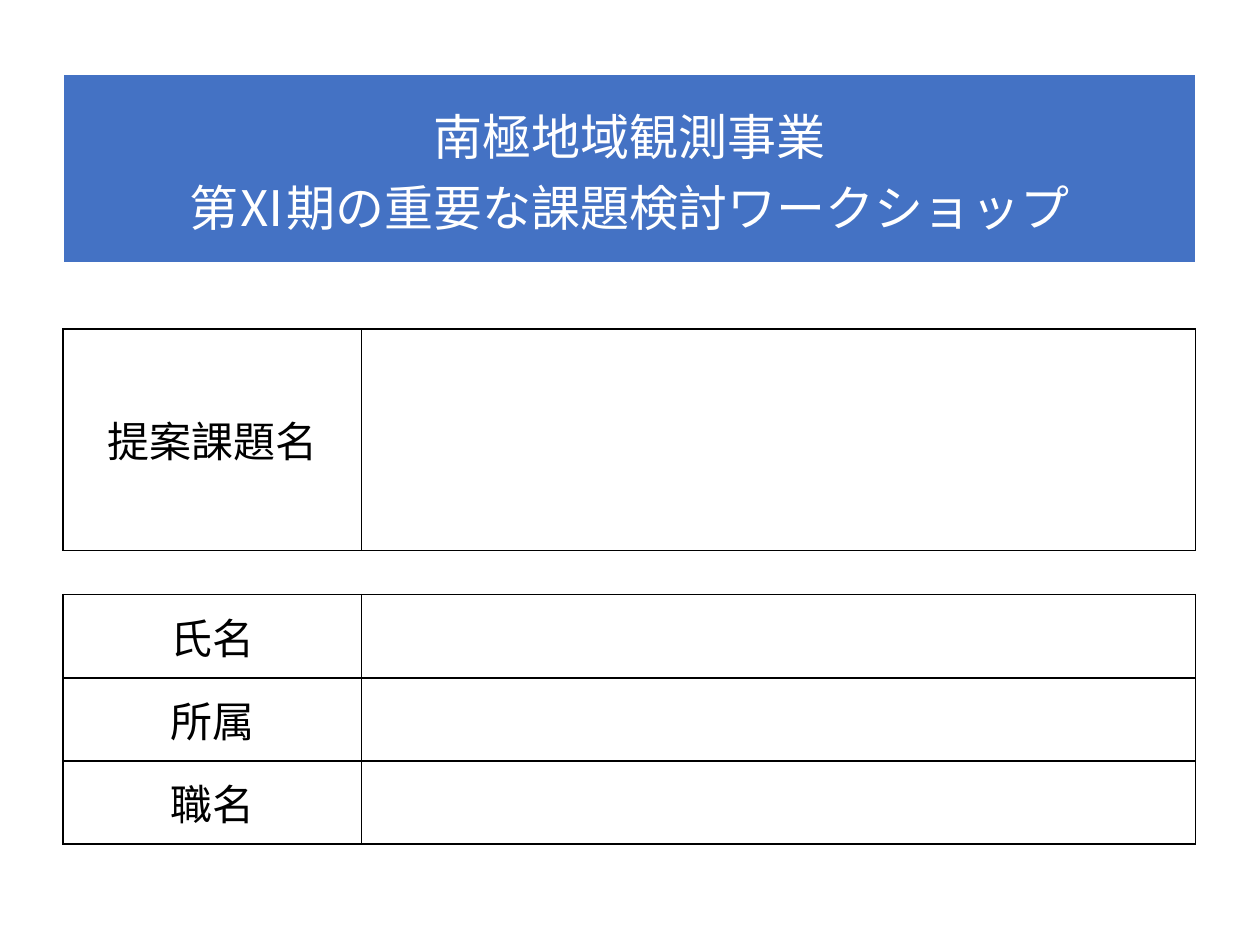
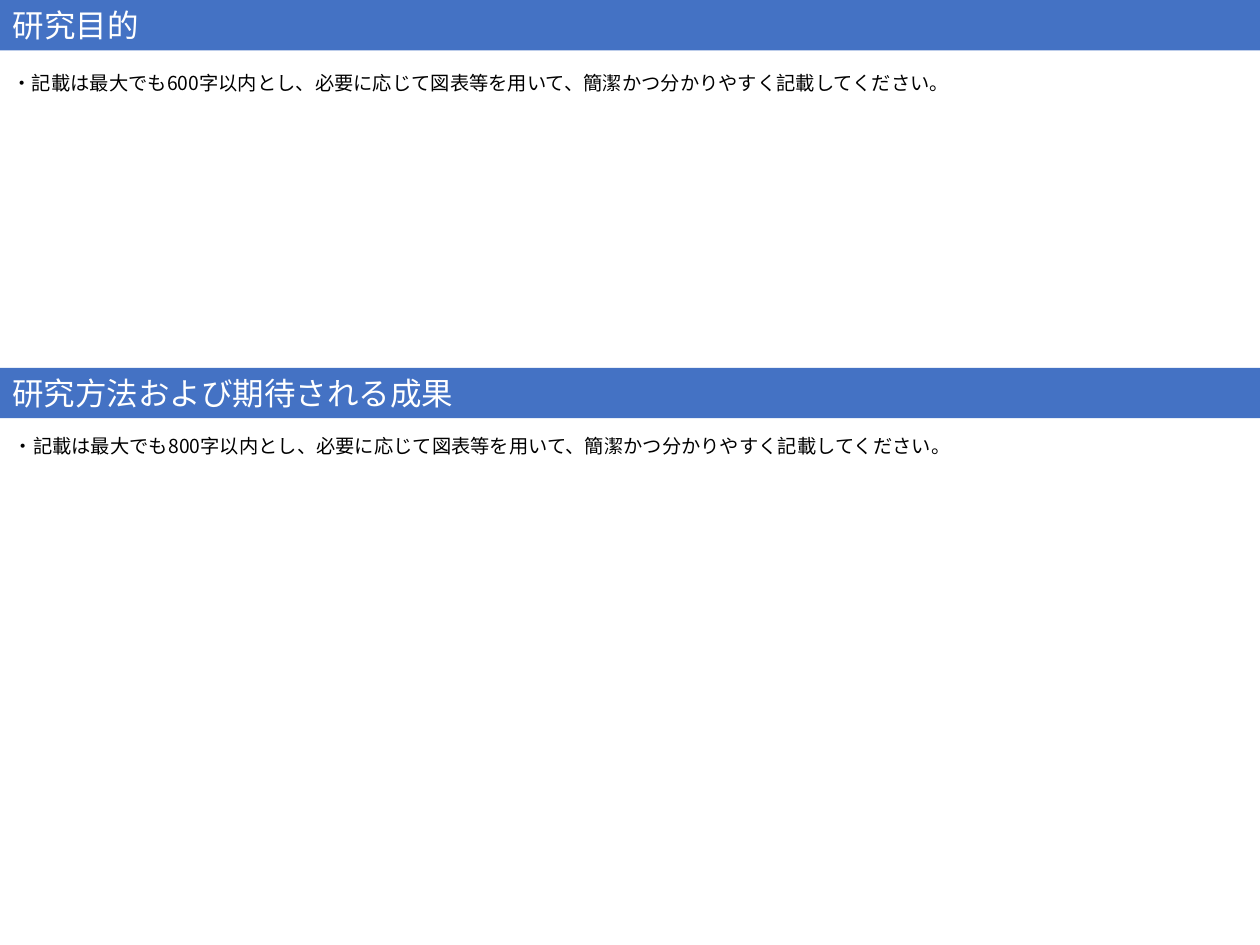
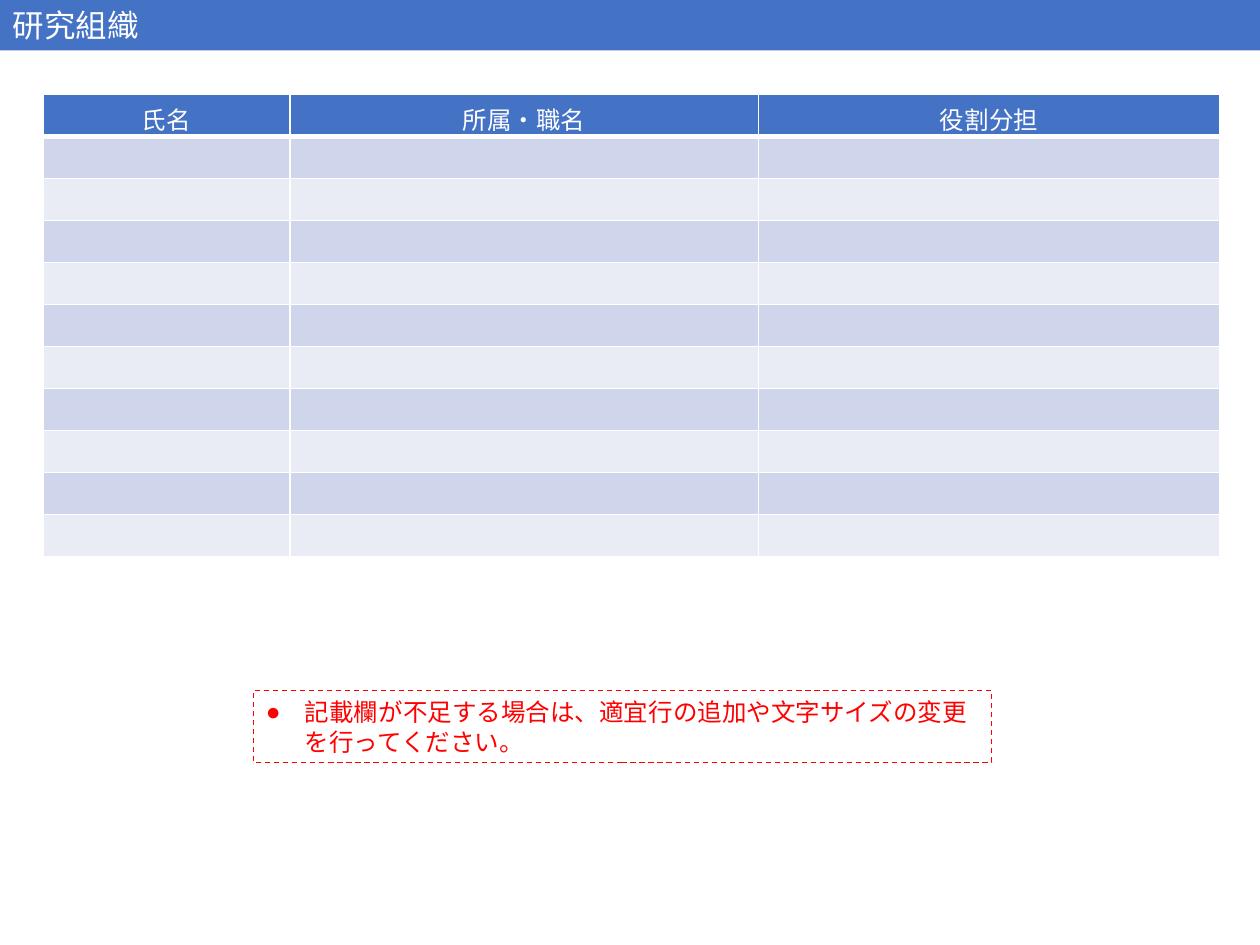
from lxml import etree
from pptx import Presentation
from pptx.dml.color import RGBColor
from pptx.enum.dml import MSO_LINE
from pptx.enum.shapes import MSO_SHAPE
from pptx.enum.text import MSO_ANCHOR, MSO_AUTO_SIZE, PP_ALIGN
from pptx.oxml.ns import qn
from pptx.util import Inches, Pt

LEFT, CENTER = PP_ALIGN.LEFT, PP_ALIGN.CENTER
MIDDLE, NO_AUTOFIT = MSO_ANCHOR.MIDDLE, MSO_AUTO_SIZE.NONE
RECTANGLE, DASH = MSO_SHAPE.RECTANGLE, MSO_LINE.DASH

FONT = "Noto Sans CJK JP"
BLUE, WHITE, BLACK, RED = "4472C4", "FFFFFF", "000000", "FF0000"
BAND_DARK, BAND_LIGHT = "CFD5EA", "E9EBF5"
color = RGBColor.from_string

TITLE_STYLE = {"size": Pt(18), "bold": False}
NOTE_STYLE = {"size": Pt(11), "bold": False}
FORM_STYLE = {"size": Pt(24), "bold": False}
BANNER_STYLE = {"size": Pt(28), "bold": False}
GRID_STYLE = {"size": Pt(14), "bold": False}

presentation = Presentation()
presentation.slide_width, presentation.slide_height = Inches(10), Inches(7.5)
SLIDE_WIDTH = presentation.slide_width
BAND_HEIGHT = Inches(0.4)
NOTE_HEIGHT = Inches(0.29)
layouts = presentation.slide_layouts


def write_text(text_frame, text, style, text_color, alignment=LEFT):
    """Fill a text frame, one paragraph for each line of text."""
    text_frame.word_wrap = True
    text_frame.text = text
    for paragraph in text_frame.paragraphs:
        paragraph.alignment = alignment
        paragraph.space_before = Pt(0)
        for run in paragraph.runs:
            for name, value in style.items():
                setattr(run.font, name, value)
            run.font.name = FONT
            run.font.color.rgb = color(text_color)
            etree.SubElement(run.font._element, qn("a:ea"), typeface=FONT)
        if not paragraph.runs:
            etree.SubElement(paragraph._p, qn("a:endParaRPr"), sz=str(int(style["size"].pt * 100)))


def add_grid(slide, left, top, columns, row_height, rows, fills, style, text_color, border):
    """Add a table with one fill for each row; blue rows get a thick rule below."""
    frame = slide.shapes.add_table(len(rows), len(columns), Inches(left), Inches(top),
                                   Inches(sum(columns)), Inches(row_height * len(rows)))
    table = frame.table
    table.first_row = table.horz_banding = False
    for column, width in zip(table.columns, columns):
        column.width = Inches(width)
    for index, (texts, fill) in enumerate(zip(rows, fills)):
        table.rows[index].height = Inches(row_height)
        above = fills[index - 1] if index else None
        for cell, text in zip(table.rows[index].cells, texts):
            write_text(cell.text_frame, text, style, text_color, CENTER)
            cell.vertical_anchor = MIDDLE
            if style is GRID_STYLE:
                cell.margin_bottom = 0
            properties = cell._tc.get_or_add_tcPr()
            for side in "LRTB":
                thick = (side == "B" and fill == BLUE) or (side == "T" and above == BLUE)
                line = etree.SubElement(properties, qn(f"a:ln{side}"), w=str(Pt(3 if thick else 1)))
                line_fill = etree.SubElement(line, qn("a:solidFill"))
                etree.SubElement(line_fill, qn("a:srgbClr"), val=border)
            if fill:
                cell.fill.solid()
                cell.fill.fore_color.rgb = color(fill)
            else:
                cell.fill.background()


# Slide 1: cover form
cover = presentation.slides.add_slide(layouts[6])
FORM_LEFT, FORM_COLUMNS = 0.5, [2.37, 6.62]
for top, row_height, labels in [(2.61, 1.76, ["提案課題名"]),
                                (4.72, 0.66, ["氏名", "所属", "職名"])]:
    add_grid(cover, FORM_LEFT, top, FORM_COLUMNS, row_height, [[label, ""] for label in labels],
             [None] * len(labels), FORM_STYLE, BLACK, BLACK)
add_grid(cover, FORM_LEFT, 0.59, [sum(FORM_COLUMNS)], 1.51,
         [["南極地域観測事業\n第Ⅺ期の重要な課題検討ワークショップ"]],
         [BLUE], BANNER_STYLE, WHITE, WHITE)

# Slides 2 and 3: heading bands
research = presentation.slides.add_slide(layouts[4])
members = presentation.slides.add_slide(layouts[1])
method_band = research.shapes.add_shape(RECTANGLE, 0, 0, SLIDE_WIDTH, BAND_HEIGHT)
method_band.shadow.inherit = False
method_band.line.fill.background()
for shape, top, heading in [(research.shapes.title, 0, "研究目的"),
                            (method_band, 2.92, "研究方法および期待される成果"),
                            (members.shapes.title, 0, "研究組織")]:
    shape.left, shape.top, shape.width, shape.height = 0, Inches(top), SLIDE_WIDTH, BAND_HEIGHT
    shape.fill.solid()
    shape.fill.fore_color.rgb = color(BLUE)
    shape.text_frame.auto_size = NO_AUTOFIT
    shape.text_frame.vertical_anchor = MIDDLE
    write_text(shape.text_frame, heading, TITLE_STYLE, WHITE)

# Slide 2: writing instructions under each heading
placeholders = {shape.placeholder_format.idx: shape for shape in research.placeholders}
for index, left, top, limit in [(1, 0, 0.51, 600), (3, 0.01, 3.39, 800)]:
    note = placeholders[index]
    note.left, note.top, note.width, note.height = Inches(left), Inches(top), SLIDE_WIDTH, NOTE_HEIGHT
    note.text_frame.auto_size = NO_AUTOFIT
    note.text_frame.vertical_anchor = MIDDLE
    write_text(note.text_frame,
               f"・記載は最大でも{limit}字以内とし、必要に応じて図表等を用いて、簡潔かつ分かりやすく記載してください。",
               NOTE_STYLE, BLACK)
for index in (2, 4):
    element = placeholders[index]._element
    element.getparent().remove(element)

# Slide 3: member table
EMPTY_ROWS = 10
add_grid(members, 0.34, 0.75, [1.96, 3.72, 3.66], 3.67 / (EMPTY_ROWS + 1),
         [["氏名", "所属・職名", "役割分担"]] + [[""] * 3] * EMPTY_ROWS,
         [BLUE] + [BAND_DARK, BAND_LIGHT] * (EMPTY_ROWS // 2), GRID_STYLE, WHITE, WHITE)

# Slide 3: dashed reminder
reminder = members.placeholders[1]
reminder.left, reminder.top = Inches(2.01), Inches(5.48)
reminder.width, reminder.height = Inches(5.86), Inches(0.57)
reminder.line.color.rgb = color(RED)
reminder.line.width = Pt(0.75)
reminder.line.dash_style = DASH
reminder.text_frame.auto_size = NO_AUTOFIT
reminder.text_frame.vertical_anchor = MIDDLE
write_text(reminder.text_frame,
           "記載欄が不足する場合は、適宜行の追加や文字サイズの変更を行ってください。", GRID_STYLE, RED)
paragraph = reminder.text_frame.paragraphs[0]
paragraph.line_spacing = Pt(17)
properties = paragraph._p.get_or_add_pPr()
properties.set("marL", str(Inches(0.31)))
properties.set("indent", str(-Inches(0.31)))
etree.SubElement(properties, qn("a:buFont"), typeface="Arial")
etree.SubElement(properties, qn("a:buChar"), char="●")

presentation.save("out.pptx")
